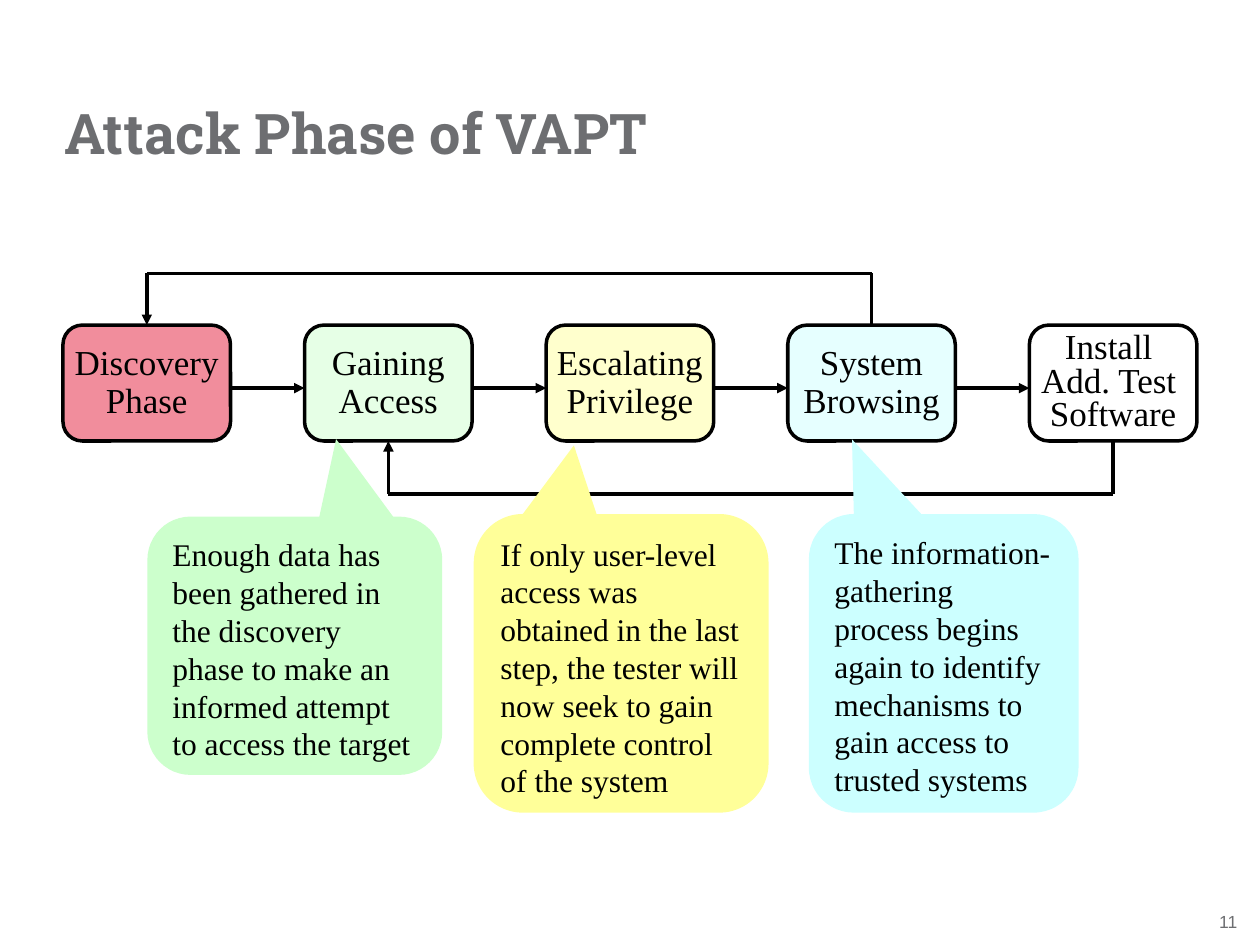
import lxml.etree
import pptx
import pptx.dml.color
import pptx.enum.shapes
import pptx.enum.text
import pptx.oxml.ns
import pptx.util

Inches = pptx.util.Inches
Pt = pptx.util.Pt
RGBColor = pptx.dml.color.RGBColor
MSO_SHAPE = pptx.enum.shapes.MSO_SHAPE
PP_ALIGN = pptx.enum.text.PP_ALIGN
MSO_ANCHOR = pptx.enum.text.MSO_ANCHOR
MSO_AUTO_SIZE = pptx.enum.text.MSO_AUTO_SIZE
qn = pptx.oxml.ns.qn

BLACK = RGBColor(0x00, 0x00, 0x00)
GRAY = RGBColor(0x6D, 0x6E, 0x71)
RED = RGBColor(0xE3, 0x18, 0x37)
GREEN = RGBColor(0xCC, 0xFF, 0xCC)
YELLOW = RGBColor(0xFF, 0xFF, 0x99)
CYAN = RGBColor(0xCC, 0xFF, 0xFF)


def write_text(sp, text, size, font="Times New Roman", color=BLACK, bold=False,
               align=PP_ALIGN.LEFT, anchor=MSO_ANCHOR.TOP, spacing=None,
               wrap=True, grow=False, inset=None):
    tf = sp.text_frame
    tf.word_wrap = wrap
    tf.vertical_anchor = anchor
    tf.auto_size = MSO_AUTO_SIZE.SHAPE_TO_FIT_TEXT if grow else MSO_AUTO_SIZE.NONE
    if inset is not None:
        tf.margin_left = tf.margin_right = Inches(inset)
        tf.margin_top = tf.margin_bottom = Inches(inset)
    for i, line in enumerate(text.split("\n")):
        p = tf.add_paragraph() if i else tf.paragraphs[0]
        p.alignment = align
        if spacing:
            p.line_spacing = spacing
        r = p.add_run()
        r.text = line
        r.font.name = font
        r.font.size = Pt(size)
        r.font.bold = bold
        r.font.color.rgb = color


class Deck:
    def __init__(self, width, height):
        self.prs = pptx.Presentation()
        self.prs.slide_width = Inches(width)
        self.prs.slide_height = Inches(height)
        self.s = self.prs.slides.add_slide(self.prs.slide_layouts[6])
        self.line_color = BLACK
        self.line_width = Pt(2)

    def label(self, text, left, top, width, height, **fmt):
        sp = self.s.shapes.add_textbox(
            Inches(left), Inches(top), Inches(width), Inches(height))
        write_text(sp, text, color=GRAY, inset=0, grow=True, **fmt)

    def shape(self, kind, left, top, width, height, adjustments):
        sp = self.s.shapes.add_shape(
            kind, Inches(left), Inches(top), Inches(width), Inches(height))
        sp.shadow.inherit = False
        for i, value in enumerate(adjustments):
            sp.adjustments[i] = value
        return sp

    def step(self, text, fill, left, top, width, height, spacing):
        sp = self.shape(MSO_SHAPE.ROUNDED_RECTANGLE, left, top, width, height, [0.167])
        if fill is None:
            sp.fill.background()
        else:
            sp.fill.solid()
            sp.fill.fore_color.rgb = fill
            clr = sp._element.spPr.find(qn("a:solidFill")).find(qn("a:srgbClr"))
            lxml.etree.SubElement(clr, qn("a:alpha")).set("val", "49000")
        sp.line.color.rgb = self.line_color
        sp.line.width = self.line_width
        write_text(sp, text, 20, align=PP_ALIGN.CENTER, anchor=MSO_ANCHOR.MIDDLE,
                   spacing=spacing, wrap=False)

    def callout(self, text, fill, left, top, width, height, tip):
        sp = self.shape(MSO_SHAPE.ROUNDED_RECTANGULAR_CALLOUT,
                        left, top, width, height, [*tip, 0.167])
        sp.fill.solid()
        sp.fill.fore_color.rgb = fill
        sp.line.fill.background()
        write_text(sp, text, 18, grow=True)

    def line(self, start, end, arrow=False):
        cxn = self.s.shapes.add_connector(
            pptx.enum.shapes.MSO_CONNECTOR.STRAIGHT,
            *(Inches(v) for v in (*start, *end)))
        cxn.line.color.rgb = self.line_color
        cxn.line.width = self.line_width
        if arrow:
            tail = lxml.etree.SubElement(cxn.get_or_add_ln() if hasattr(cxn, "get_or_add_ln")
                                         else cxn.line._get_or_add_ln(), qn("a:tailEnd"))
            tail.set("type", "triangle")
        lxml.etree.SubElement(cxn._element.spPr, qn("a:effectLst"))

    def loop(self, x_from, x_to, y_box, y_rail):
        self.line((x_from, y_box), (x_from, y_rail))
        self.line((x_from, y_rail), (x_to, y_rail))
        self.line((x_to, y_rail), (x_to, y_box), arrow=True)


def main():
    deck = Deck(10, 7.5)
    deck.label("11", 9.65, 7.23, 0.17, 0.17, size=10, font="Arial",
               align=PP_ALIGN.RIGHT, anchor=MSO_ANCHOR.MIDDLE, wrap=False)
    deck.label("Attack Phase of VAPT", 0.51, 0.78, 8.98, 0.54, size=32,
               font="Roboto Slab", bold=True)

    steps = [
        ("Discovery\nPhase", RED, 0.9),
        ("Gaining\nAccess", GREEN, 0.9),
        ("Escalating\nPrivilege", YELLOW, 0.9),
        ("System\nBrowsing", CYAN, 0.9),
        ("Install \nAdd. Test \nSoftware", None, 0.8),
    ]
    top, width, height = 2.58, 1.33, 0.92
    pitch = (9 - width) / (len(steps) - 1)
    lefts = [0.5 + i * pitch for i in range(len(steps))]
    centers = [left + width / 2 for left in lefts]
    for left, (text, fill, spacing) in zip(lefts, steps):
        deck.step(text, fill, left, top, width, height, spacing)
    for left, following in zip(lefts, lefts[1:]):
        deck.line((left + width, 3.08), (following, 3.08), arrow=True)
    deck.loop(centers[3], centers[0], top, 2.17)
    deck.loop(centers[4], centers[1], top + height, 3.92)

    callouts = [
        ("Enough data has been gathered in the discovery phase to make an informed "
         "attempt to access the target", GREEN, 1.17, 4.1, 2.34, 2.05, (0.14, -0.8)),
        ("If only user-level access was obtained in the last step, the tester will "
         "now seek to gain complete control of the system",
         YELLOW, 3.76, 4.08, 2.34, 2.37, (-0.16, -0.73)),
        ("The information-gathering process begins again to identify mechanisms to "
         "gain access to trusted systems", CYAN, 6.42, 4.08, 2.14, 2.37, (-0.34, -0.75)),
    ]
    for callout in callouts:
        deck.callout(*callout)

    deck.prs.save("out.pptx")


if __name__ == "__main__":
    main()
